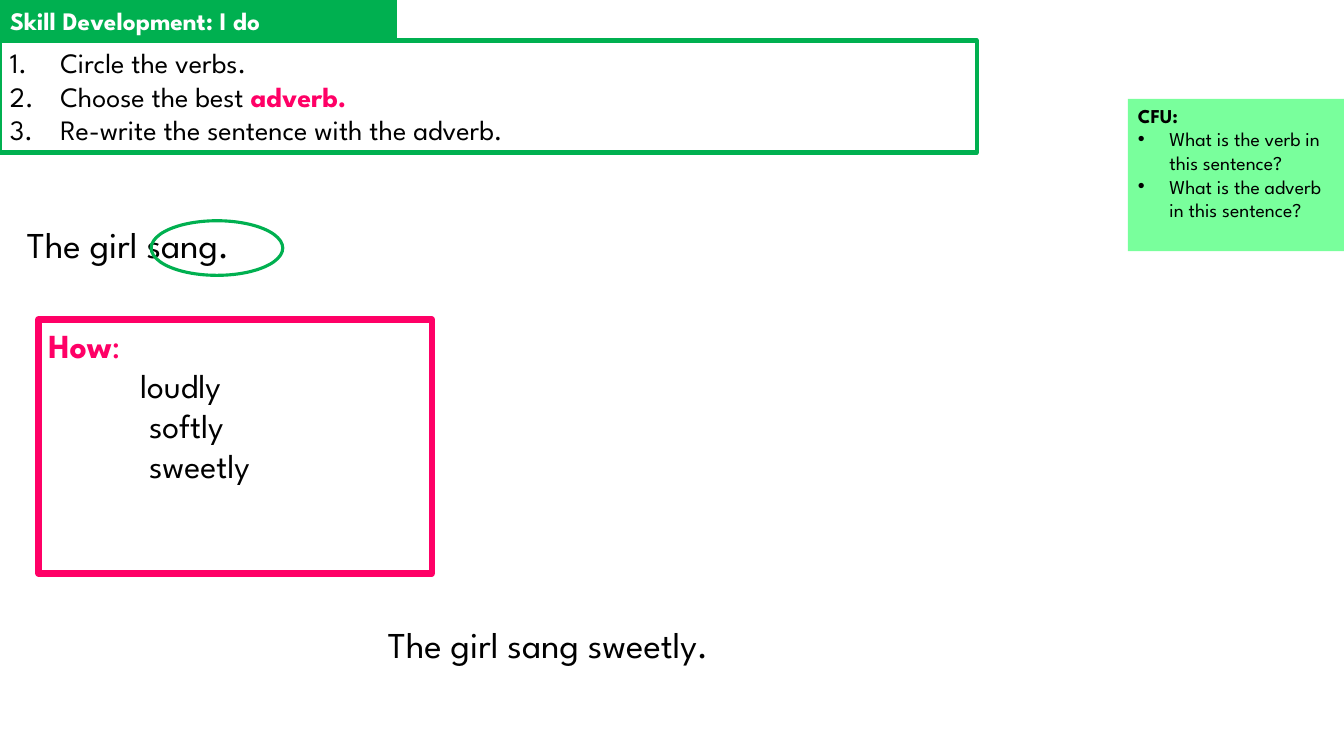
import pptx
import pptx.dml.color
import pptx.enum.shapes
import pptx.enum.text
import pptx.util
from lxml import etree

Pt = pptx.util.Pt
Shapes = pptx.enum.shapes.MSO_SHAPE
GREEN, PINK, MINT = "00B050", "FF0066", "79FF9C"
BLACK, WHITE = "000000", "FFFFFF"
NUMBERED = ("+mj-lt", "buAutoNum", {"type": "arabicPeriod"})
DOTTED = ("Arial", "buChar", {"char": "•"})
DRAWING = "{http://schemas.openxmlformats.org/drawingml/2006/main}"


def color(value):
    return pptx.dml.color.RGBColor.from_string(value)


def set_attributes(target, values):
    for name, value in values.items():
        setattr(target, name, value)


class LessonSlide:
    font_name = "League Spartan"
    frame_format = {
        "word_wrap": True,
        "auto_size": pptx.enum.text.MSO_AUTO_SIZE.NONE,
        "vertical_anchor": pptx.enum.text.MSO_ANCHOR.TOP,
        "margin_left": Pt(7.2),
        "margin_right": Pt(7.2),
        "margin_top": Pt(3.6),
        "margin_bottom": Pt(3.6),
    }

    def __init__(self, presentation):
        self.slide = presentation.slides.add_slide(presentation.slide_layouts[5])

    def title(self, text, box, fill):
        shape = self.slide.shapes.title
        names = ("left", "top", "width", "height")
        set_attributes(shape, dict(zip(names, map(Pt, box))))
        shape.fill.solid()
        shape.fill.fore_color.rgb = color(fill)
        self.add_text(shape, [{"runs": [(text, WHITE, True)]}], 18)

    def panel(self, kind, box, fill=None, line=None, weight=0):
        shape = self.slide.shapes.add_shape(kind, *map(Pt, box))
        shape.shadow.inherit = False
        if fill:
            shape.fill.solid()
            shape.fill.fore_color.rgb = color(fill)
        else:
            shape.fill.background()
        if line:
            shape.line.color.rgb = color(line)
            shape.line.width = Pt(weight)
        else:
            shape.line.fill.background()
        return shape

    def sentence(self, text, box):
        shape = self.slide.shapes.add_textbox(*map(Pt, box))
        self.add_text(shape, [{"runs": [(text, BLACK, False)]}], 26)

    def add_text(self, shape, paragraphs, size):
        frame = shape.text_frame
        set_attributes(frame, self.frame_format)
        for index, content in enumerate(paragraphs):
            paragraph = frame.add_paragraph() if index else frame.paragraphs[0]
            paragraph.alignment = pptx.enum.text.PP_ALIGN.LEFT
            self.indent(paragraph, content.get("left", 0), content.get("marker"))
            for text, ink, bold in content["runs"]:
                run = paragraph.add_run()
                run.text = text
                values = {"name": self.font_name, "size": Pt(size), "bold": bold}
                set_attributes(run.font, values)
                run.font.color.rgb = color(ink)

    def indent(self, paragraph, left, marker):
        properties = paragraph._p.get_or_add_pPr()
        properties.set("marL", str(Pt(left)))
        if marker:
            typeface, tag, attributes = marker
            properties.set("indent", str(-Pt(left)))
            etree.SubElement(properties, DRAWING + "buFont", typeface=typeface)
            etree.SubElement(properties, DRAWING + tag, attributes)


def main():
    presentation = pptx.Presentation()
    presentation.slide_width = Pt(960)
    presentation.slide_height = Pt(540)
    lesson = LessonSlide(presentation)

    lesson.title("Skill Development: I do", (0, 0, 283.5, 29), GREEN)
    lesson.sentence("The girl sang sweetly.", (270, 440.6, 708, 39))

    questions = ["What is the verb in this sentence?", "What is the adverb in this sentence?"]
    check = lesson.panel(Shapes.RECTANGLE, (805.7, 70.6, 156, 108.7), fill=MINT)
    lesson.add_text(check, [{"runs": [("CFU:", BLACK, True)]}] + [
        {"runs": [(question, BLACK, False)], "left": 22.5, "marker": DOTTED}
        for question in questions
    ], 14)

    adverbs = [("loudly", 65.5), ("softly", 72), ("sweetly", 72)]
    how = lesson.panel(Shapes.RECTANGLE, (27.4, 228.2, 281, 181.4), line=PINK, weight=4.5)
    lesson.add_text(how, [{"runs": [("How", PINK, True), (":", PINK, False)]}] + [
        {"runs": [(adverb, BLACK, False)], "left": left} for adverb, left in adverbs
    ], 24)

    lesson.sentence("The girl sang.", (12.2, 154.8, 460, 39))
    lesson.panel(Shapes.OVAL, (108, 157.7, 94, 39), line=GREEN, weight=2.25)

    steps = [
        [("Circle the verbs.", BLACK, False)],
        [("Choose the best ", BLACK, False), ("adverb.", PINK, True)],
        [("Re-write the sentence with the adverb.", BLACK, False)],
    ]
    task = lesson.panel(Shapes.RECTANGLE, (0, 29, 697.7, 80), fill=WHITE, line=GREEN, weight=3)
    lesson.add_text(task, [{"runs": step, "left": 36, "marker": NUMBERED} for step in steps], 20)

    presentation.save("out.pptx")


if __name__ == "__main__":
    main()
